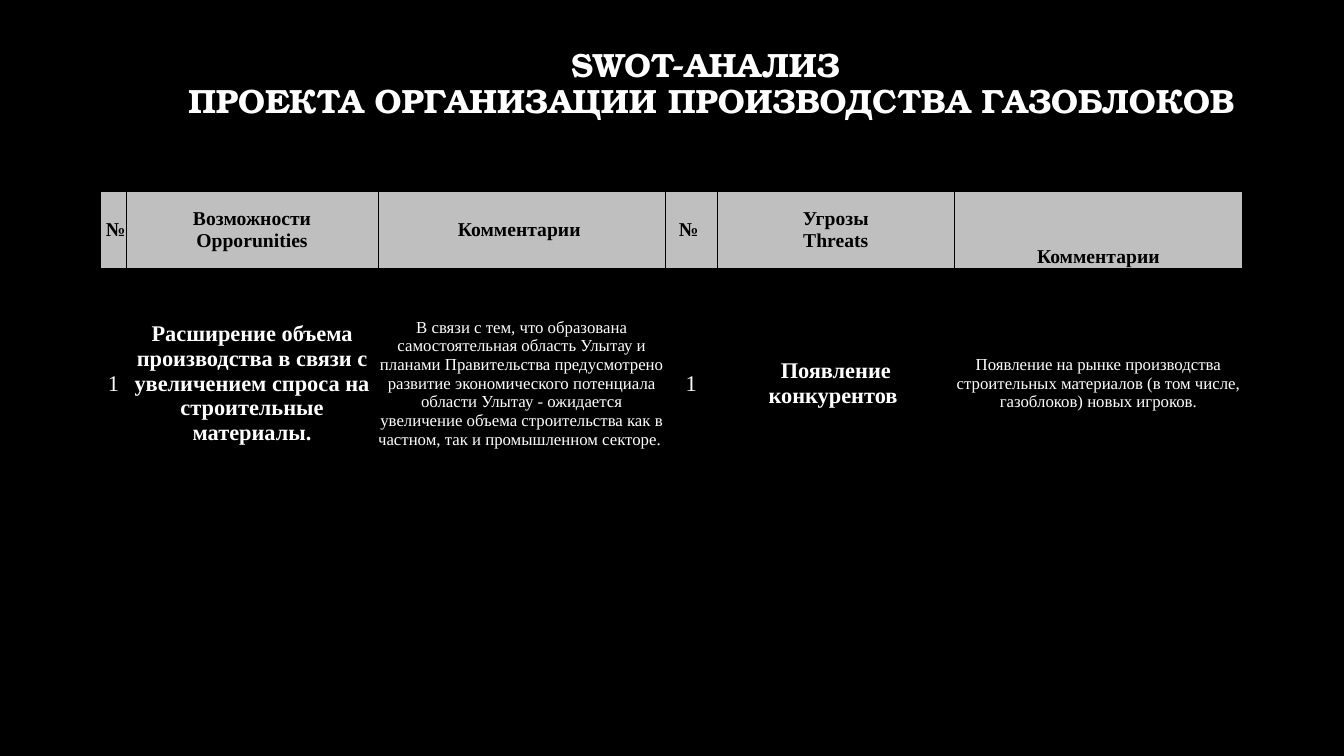
from pptx import Presentation
from pptx.dml.color import RGBColor
from pptx.enum.text import MSO_ANCHOR as Anchor, PP_ALIGN as Align
from pptx.oxml.ns import qn
from pptx.util import Inches, Pt
from lxml.etree import SubElement

WHITE, BLACK, GRAY = "FFFFFF", "000000", "BFBFBF"
TITLE_FONT, TABLE_FONT = "TeX Gyre Bonum", "Times New Roman"
TITLE = "SWOT-АНАЛИЗ \nПРОЕКТА ОРГАНИЗАЦИИ ПРОИЗВОДСТВА ГАЗОБЛОКОВ"

COLUMN_WIDTHS = [0.25, 2.5, 2.85, 0.51, 2.36, 2.85]
ROW_HEIGHTS = [0.76, 2.29]
HEADERS = [" №", "Возможности\nOpporunities", "Комментарии ",
           "№ ", "Угрозы\nThreats", "Комментарии"]
ENTRIES = [
    "1",
    "Расширение объема производства в связи с увеличением спроса на "
    "строительные материалы.",
    "В связи с тем, что образована самостоятельная область Улытау и планами "
    "Правительства предусмотрено развитие экономического потенциала области "
    "Улытау - ожидается увеличение объема строительства как в частном, так и "
    "промышленном секторе. ",
    "1",
    "Появление конкурентов ",
    "Появление на рынке производства строительных материалов (в том числе, "
    "газоблоков) новых игроков.",
]
# Size and weight of number, factor and comment entries
ENTRY_STYLES = [(16, False), (16, True), (12, False)]
GROUP = len(ENTRY_STYLES)


def color(value):
    return RGBColor.from_string(value)


def write_text(frame, text, font_name, size, hex_color, bold):
    """Fill the first paragraph, with a line break between lines."""
    frame.word_wrap = True
    paragraph = frame.paragraphs[0]
    paragraph.alignment = Align.CENTER
    for index, line in enumerate(text.split("\n")):
        if index:
            paragraph.add_line_break()
        run = paragraph.add_run()
        run.text = line
        run.font.name = font_name
        run.font.size = Pt(size)
        run.font.bold = bold
        run.font.color.rgb = color(hex_color)
    return paragraph


def add_title(slide):
    box = slide.shapes.add_textbox(Inches(1.74), Inches(0.36),
                                   Inches(10.63), Inches(0.89))
    box.text_frame.vertical_anchor = Anchor.BOTTOM
    paragraph = write_text(box.text_frame, TITLE, TITLE_FONT, 24, WHITE, True)
    paragraph.line_spacing = 0.9


def set_borders(cell, row, column):
    """Thick lines surround each three-column group and the header."""
    widths = {
        "a:lnL": 1 if column % GROUP == 0 else 0.5,
        "a:lnR": 1 if column % GROUP == GROUP - 1 else 0.5,
        "a:lnT": 1,
        "a:lnB": 1 if row == 0 else 0.5,
    }
    properties = cell._tc.get_or_add_tcPr()
    for tag, width in widths.items():
        line = SubElement(properties, qn(tag), w=str(Pt(width)))
        fill = SubElement(line, qn("a:solidFill"))
        SubElement(fill, qn("a:srgbClr"), val=BLACK)


def format_cell(cell, row, column):
    cell.margin_left = cell.margin_right = 0
    cell.margin_top = cell.margin_bottom = 0
    cell.vertical_anchor = Anchor.MIDDLE
    set_borders(cell, row, column)
    if row == 0:
        cell.fill.solid()
        cell.fill.fore_color.rgb = color(GRAY)
    else:
        cell.fill.background()


def add_swot_table(slide):
    frame = slide.shapes.add_table(
        len(ROW_HEIGHTS), len(COLUMN_WIDTHS), Inches(1), Inches(1.9),
        Inches(sum(COLUMN_WIDTHS)), Inches(sum(ROW_HEIGHTS)))
    table = frame.table
    table.first_row = table.horz_banding = False
    for row, height in enumerate(ROW_HEIGHTS):
        table.rows[row].height = Inches(height)
    for column, width in enumerate(COLUMN_WIDTHS):
        table.columns[column].width = Inches(width)
        header, entry = table.cell(0, column), table.cell(1, column)
        format_cell(header, 0, column)
        format_cell(entry, 1, column)
        write_text(header.text_frame, HEADERS[column],
                   TABLE_FONT, 14, BLACK, True)
        size, bold = ENTRY_STYLES[column % GROUP]
        write_text(entry.text_frame, ENTRIES[column],
                   TABLE_FONT, size, WHITE, bold)
    # The last heading sits at the bottom of its cell
    table.cell(0, len(HEADERS) - 1).vertical_anchor = Anchor.BOTTOM


def main():
    presentation = Presentation()
    presentation.slide_width = Inches(13.33)
    presentation.slide_height = Inches(7.5)
    slide = presentation.slides.add_slide(presentation.slide_layouts[6])

    # Black background
    slide.background.fill.solid()
    slide.background.fill.fore_color.rgb = color(BLACK)

    # Content
    add_title(slide)
    add_swot_table(slide)
    presentation.save("out.pptx")


if __name__ == "__main__":
    main()
